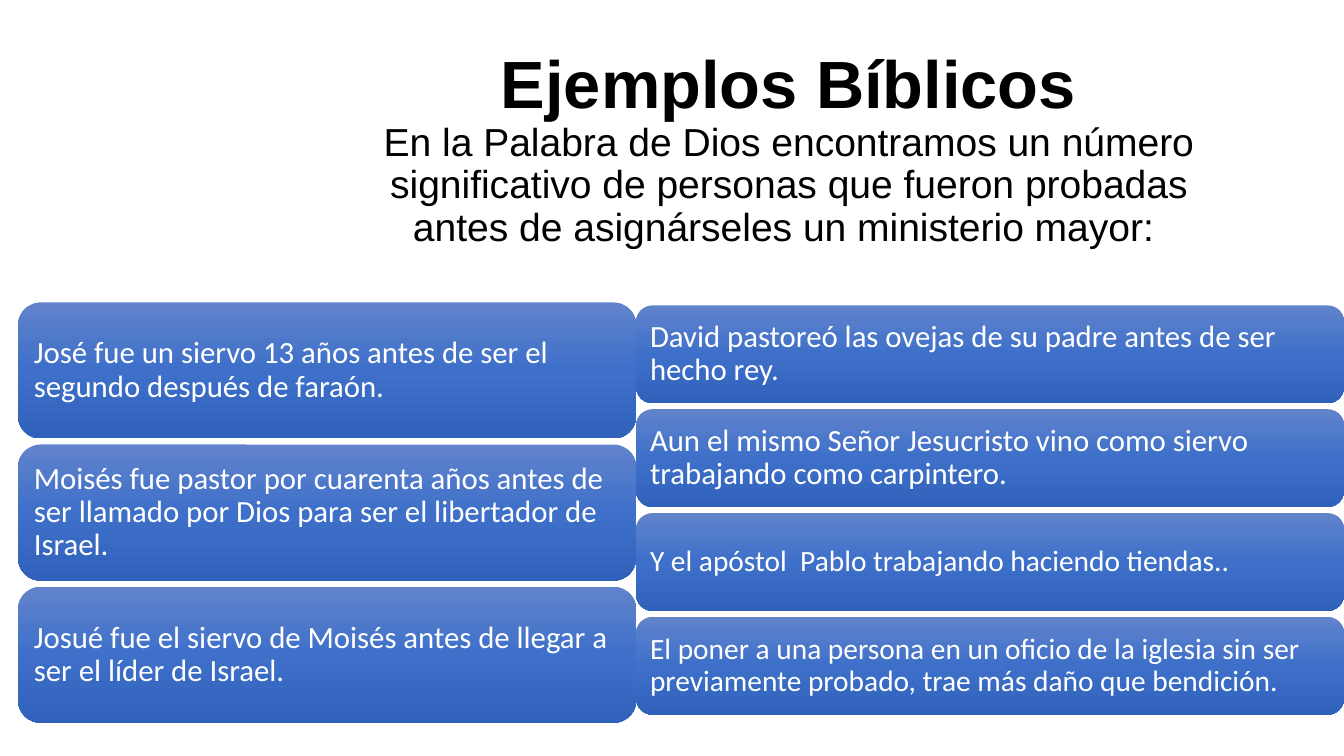
from copy import deepcopy

from pptx import Presentation
from pptx.dml.color import RGBColor
from pptx.enum.shapes import MSO_SHAPE
from pptx.enum.text import MSO_ANCHOR, MSO_AUTO_SIZE, PP_ALIGN
from pptx.oxml.ns import qn
from pptx.util import Inches, Pt

BLUES = ["6183CB", "3E70CA", "3062BB"]
LEFT = [
    ("José fue un siervo 13 años antes de ser el segundo después de faraón.", 22),
    ("Moisés fue pastor por cuarenta años antes de ser llamado por Dios "
     "para ser el libertador de Israel.", 22),
    ("Josué fue el siervo de Moisés antes de llegar a ser el líder de Israel.", 22),
]
RIGHT = [
    ("David pastoreó las ovejas de su padre antes de ser hecho rey.", 22),
    ("Aun el mismo Señor Jesucristo vino como siervo trabajando como carpintero.", 22),
    ("Y el apóstol  Pablo trabajando haciendo tiendas..", 21),
    ("El poner a una persona en un oficio de la iglesia sin ser previamente "
     "probado, trae más daño que bendición.", 21),
]
HEAD = "Ejemplos Bíblicos"
LEAD = ("En la Palabra de Dios encontramos un número significativo de personas "
        "que fueron probadas antes de asignárseles un ministerio mayor: ")


def paint(color, code):
    """Set a colour from a hex string."""
    color.rgb = RGBColor.from_string(code)


def style(run, face, size, code, bold=False):
    """Format one run of text."""
    run.font.name, run.font.size, run.font.bold = face, Pt(size), bold
    paint(run.font.color, code)


def shade(shape):
    """Fill a shape with the blue gradient, light at the top."""
    shape.fill.gradient()
    shape.fill.gradient_angle = 270
    stops = shape._element.spPr.find(".//" + qn("a:gsLst"))
    stops.append(deepcopy(stops[-1]))
    for i, stop in enumerate(shape.fill.gradient_stops):
        stop.position = i / (len(BLUES) - 1)
        paint(stop.color, BLUES[i])


def card(slide, box, text, size):
    """Add one rounded card with its sentence."""
    shape = slide.shapes.add_shape(
        MSO_SHAPE.ROUNDED_RECTANGLE, *[Inches(v) for v in box])
    shape.shadow.inherit = False
    shape.line.fill.background()
    shade(shape)
    frame = shape.text_frame
    frame.word_wrap = True
    frame.vertical_anchor = MSO_ANCHOR.MIDDLE
    frame.margin_left = frame.margin_right = Inches(0.09)
    frame.margin_top = frame.margin_bottom = Inches(0.09)
    frame.text = text
    para = frame.paragraphs[0]
    para.alignment = PP_ALIGN.LEFT
    para.line_spacing = 0.9
    style(para.runs[0], "Calibri", size, "FFFFFF")


def stack(slide, items, left, top, width, height, gap):
    """Stack cards downwards at an equal gap."""
    for row, (text, size) in enumerate(items):
        card(slide, (left, top + row * (height + gap), width, height), text, size)


def title(slide):
    """Place the heading and its lead-in in the title placeholder."""
    shape = slide.shapes.title
    shape.left, shape.top = Inches(3.27), Inches(1.13)
    shape.width, shape.height = Inches(9.11), Inches(1.45)
    frame = shape.text_frame
    frame.word_wrap = True
    frame.auto_size = MSO_AUTO_SIZE.NONE
    frame.vertical_anchor = MSO_ANCHOR.MIDDLE
    frame.margin_bottom = Inches(0.78)
    frame.text = HEAD + "\v" + LEAD
    para = frame.paragraphs[0]
    para.alignment = PP_ALIGN.CENTER
    para.line_spacing = 0.9
    head, lead = para.runs
    style(head, "Arial", 47.7, "000000", True)
    style(lead, "Arial", 27.9, "000000")


def main():
    """Build and save the slide."""
    deck = Presentation()
    deck.slide_width, deck.slide_height = Inches(13.33), Inches(7.5)
    slide = deck.slides.add_slide(deck.slide_layouts[5])
    stack(slide, LEFT, 0.18, 3, 6.13, 1.35, 0.06)
    title(slide)
    stack(slide, RIGHT, 6.31, 3.03, 7.02, 0.97, 0.06)
    deck.save("out.pptx")


if __name__ == "__main__":
    main()
